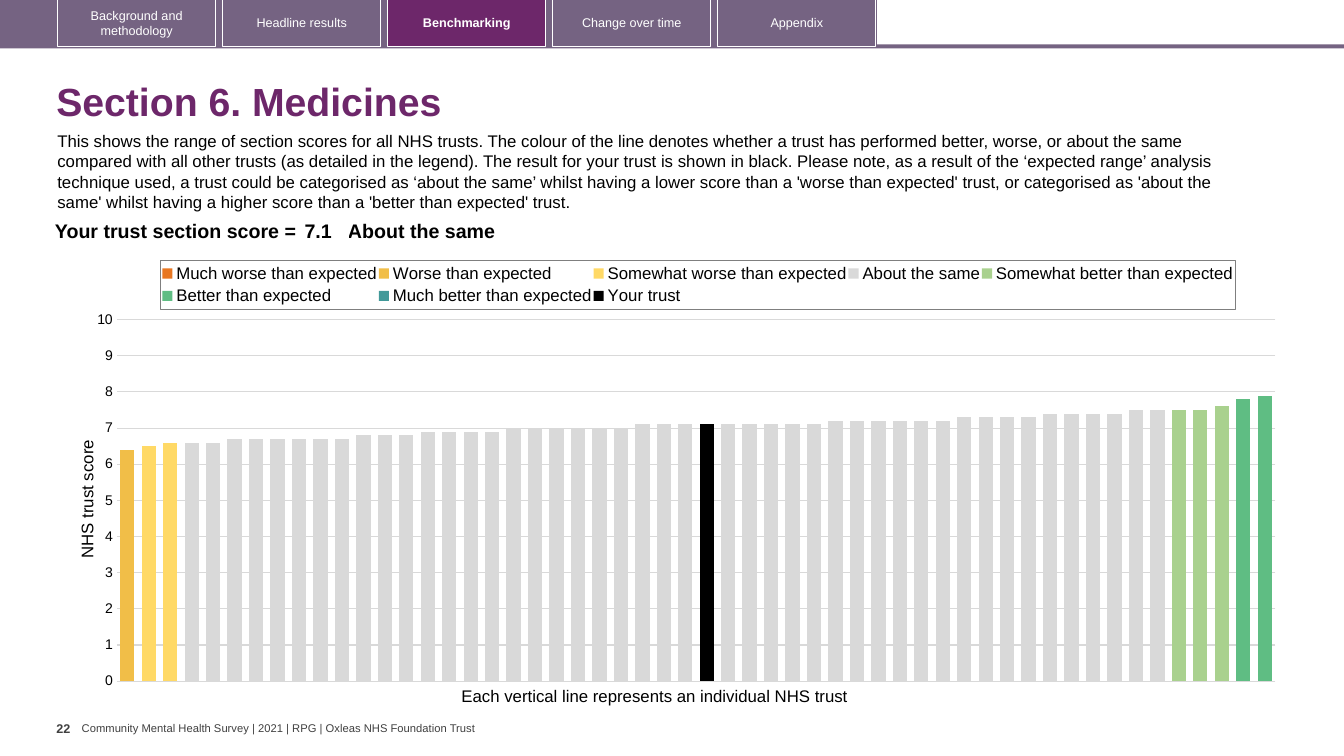
from copy import deepcopy
from dataclasses import dataclass

from lxml.etree import SubElement
from pptx import Presentation
from pptx.chart.data import CategoryChartData
from pptx.dml.color import RGBColor
from pptx.enum.chart import XL_CHART_TYPE, XL_LEGEND_POSITION, XL_TICK_MARK
from pptx.enum.shapes import MSO_SHAPE
from pptx.enum.text import MSO_ANCHOR, PP_ALIGN
from pptx.oxml import parse_xml
from pptx.oxml.ns import nsdecls, qn
from pptx.util import Inches, Pt


@dataclass(frozen=True)
class Theme:
    font: str = "Arial"
    plum: str = "6D276A"
    mauve: str = "756382"
    white: str = "FFFFFF"
    black: str = "000000"
    grey: str = "404040"
    grid: str = "D9D9D9"
    frame: str = "7F7F7F"
    title: int = 28
    score: int = 14
    body: int = 12
    ticks: int = 10
    small: int = 9
    footer: int = 8


T = Theme()
WIDTH, HEIGHT = Inches(13.33), Inches(7.5)

TABS = ["Background and methodology", "Headline results", "Benchmarking",
        "Change over time", "Appendix"]
ACTIVE_TAB = "Benchmarking"
INTRO = (
    "This shows the range of section scores for all NHS trusts. The colour of the line "
    "denotes whether a trust has performed better, worse, or about the same compared with "
    "all other trusts (as detailed in the legend). The result for your trust is shown in "
    "black. Please note, as a result of the ‘expected range’ analysis technique used, a "
    "trust could be categorised as ‘about the same’ whilst having a lower score than a "
    "'worse than expected' trust, or categorised as 'about the same' whilst having a higher "
    "score than a 'better than expected' trust.")

TRUSTS = 54
# Scores as (score, number of trusts) in ascending order
ABOUT_THE_SAME = [(6.6, 2), (6.7, 6), (6.8, 3), (6.9, 4), (7, 6), (7.1, 9),
                  (7.2, 6), (7.3, 4), (7.4, 4), (7.5, 2)]
# Series: name, colour, first trust, scores
BANDS = [
    ("Much worse than expected", "E87722", 1, []),
    ("Worse than expected", "F1BE48", 1, [(6.4, 1)]),
    ("Somewhat worse than expected", "FFD966", 2, [(6.5, 1), (6.6, 1)]),
    ("About the same", "D9D9D9", 4, ABOUT_THE_SAME),
    ("Somewhat better than expected", "A9D18E", 50, [(7.5, 2), (7.6, 1)]),
    ("Better than expected", "5FBD83", 53, [(7.8, 1), (7.9, 1)]),
    ("Much better than expected", "419999", 1, []),
    ("Your trust", T.black, 28, [(7.1, 1)]),
]


def col(n):
    """Hundredths of the slide width."""
    return round(WIDTH * n / 100)


def row(n):
    """Hundredths of the slide height."""
    return round(HEIGHT * n / 100)


def place(x, y, w, h):
    return col(x), row(y), col(w), row(h)


def style(font, size, color=T.black, bold=False):
    font.name, font.size, font.bold = T.font, Pt(size), bold
    font.color.rgb = RGBColor.from_string(color)


def add_text(slide, box, text, size, color=T.black, bold=False, wrap=True,
             anchor=MSO_ANCHOR.TOP, spacing=None, inset=None):
    tf = slide.shapes.add_textbox(*place(*box)).text_frame
    tf.word_wrap, tf.vertical_anchor = wrap, anchor
    if inset is not None:
        tf.margin_left = tf.margin_right = 0
        tf.margin_top = tf.margin_bottom = Inches(inset)
    p = tf.paragraphs[0]
    p.text, p.line_spacing = text, spacing
    style(p.font, size, color, bold)


def add_rect(slide, box, fill=None, line=None):
    sp = slide.shapes.add_shape(MSO_SHAPE.RECTANGLE, *place(*box))
    sp.shadow.inherit = False
    if fill:
        sp.fill.solid()
        sp.fill.fore_color.rgb = RGBColor.from_string(fill)
    else:
        sp.fill.background()
    if line:
        sp.line.color.rgb = RGBColor.from_string(line)
        sp.line.width = Pt(0.75)
    else:
        sp.line.fill.background()
    return sp


def add_tab(slide, index, label):
    active = label == ACTIVE_TAB
    sp = add_rect(slide, (4.28 + 12.28 * index, -0.13, 11.78, 6.27),
                  T.plum if active else None, T.white)
    tf = sp.text_frame
    tf.word_wrap, tf.vertical_anchor = True, MSO_ANCHOR.MIDDLE
    p = tf.paragraphs[0]
    p.text, p.alignment = label, PP_ALIGN.CENTER
    style(p.font, T.small, T.white, active)


def add_score_row(slide):
    cells = [("Your trust section score =", 19.73, 0.04, PP_ALIGN.RIGHT),
             ("7.1", 3.53, 0.04, PP_ALIGN.LEFT),
             ("About the same", 64.44, 0, PP_ALIGN.LEFT)]
    total = sum(width for _, width, _, _ in cells)
    table = slide.shapes.add_table(1, len(cells), *place(2.63, 28.67, total, 4.13)).table
    table.first_row = table.horz_banding = False
    for i, (text, width, side, align) in enumerate(cells):
        table.columns[i].width = col(width)
        cell = table.cell(0, i)
        cell.fill.background()
        cell.margin_left = cell.margin_right = Inches(side)
        cell.margin_top = cell.margin_bottom = Inches(0.04)
        p = cell.text_frame.paragraphs[0]
        p.text, p.alignment = text, align
        style(p.font, T.score, bold=True)


def scores(first, runs):
    values = [score for score, count in runs for _ in range(count)]
    before = [None] * (first - 1)
    return before + values + [None] * (TRUSTS - len(before) - len(values))


def layout(x, y, w=None, h=None, inner=False):
    """Manual layout in shares of the chart's size."""
    target = '<c:layoutTarget val="inner"/>' if inner else ""
    sizes = f'<c:w val="{w}"/><c:h val="{h}"/>' if w else ""
    return parse_xml(
        f'<c:layout {nsdecls("c")}><c:manualLayout>{target}<c:xMode val="edge"/>'
        f'<c:yMode val="edge"/><c:x val="{x}"/><c:y val="{y}"/>{sizes}'
        '</c:manualLayout></c:layout>')


def set_layout(parent, new, after=None):
    for old in parent.findall(qn("c:layout")):
        parent.remove(old)
    if after:
        parent.find(qn(after)).addnext(new)
    else:
        parent.insert(0, new)


def move_last_series_to_right_axis(plot_area):
    bars = plot_area.find(qn("c:barChart"))
    right_bars = deepcopy(bars)
    bars.remove(bars.findall(qn("c:ser"))[-1])
    for ser in right_bars.findall(qn("c:ser"))[:-1]:
        right_bars.remove(ser)
    bars.addnext(right_bars)

    cat_ax, val_ax = plot_area.find(qn("c:catAx")), plot_area.find(qn("c:valAx"))
    right_cat, right_val = deepcopy(cat_ax), deepcopy(val_ax)
    val_ax.addnext(right_cat)
    right_cat.addnext(right_val)
    ids = {cat_ax.find(qn("c:axId")).get("val"): "5001",
           val_ax.find(qn("c:axId")).get("val"): "5002"}
    for part in (right_bars, right_cat, right_val):
        for ref in part.findall(qn("c:axId")) + part.findall(qn("c:crossAx")):
            ref.set("val", ids[ref.get("val")])
    for tag in ("c:majorGridlines", "c:title"):
        right_val.remove(right_val.find(qn(tag)))
    for tag, value in (("c:axPos", "r"), ("c:majorTickMark", "out"),
                       ("c:tickLblPos", "none"), ("c:crosses", "max")):
        right_val.find(qn(tag)).set("val", value)


def add_score_chart(slide):
    data = CategoryChartData()
    data.categories = [str(n) for n in range(1, TRUSTS + 1)]
    for name, _, first, runs in BANDS:
        data.add_series(name, scores(first, runs))
    chart = slide.shapes.add_chart(XL_CHART_TYPE.COLUMN_CLUSTERED,
                                   *place(5.03, 32.93, 91.15, 59.2), data).chart
    style(chart.font, T.ticks)
    chart.has_title = False

    # Columns
    plot = chart.plots[0]
    plot.gap_width, plot.overlap, plot.vary_by_categories = 50, 100, False
    for series, (_, color, _, _) in zip(plot.series, BANDS):
        series.format.fill.solid()
        series.format.fill.fore_color.rgb = RGBColor.from_string(color)

    # Axes
    chart.category_axis.visible = False
    axis = chart.value_axis
    axis.minimum_scale, axis.maximum_scale, axis.major_unit = 0, 10, 1
    axis.major_tick_mark = axis.minor_tick_mark = XL_TICK_MARK.NONE
    axis.format.line.fill.background()
    axis.major_gridlines.format.line.color.rgb = RGBColor.from_string(T.grid)
    axis.major_gridlines.format.line.width = Pt(0.75)
    style(axis.tick_labels.font, T.ticks)
    title = axis.axis_title
    title.text_frame.text = "NHS trust score"
    style(title.text_frame.paragraphs[0].font, T.body)
    title.text_frame._txBody.bodyPr.set("rot", "-5400000")
    set_layout(title._element, layout(0.005, 0.42), "c:tx")

    # Legend
    chart.has_legend = True
    legend = chart.legend
    legend.position, legend.include_in_layout = XL_LEGEND_POSITION.TOP, False
    style(legend.font, T.body)
    set_layout(legend._element, layout(0.076, 0.025, 0.877, 0.11), "c:legendPos")
    frame = parse_xml(
        f'<c:spPr {nsdecls("c", "a")}><a:ln w="9525"><a:solidFill>'
        f'<a:srgbClr val="{T.frame}"/></a:solidFill></a:ln></c:spPr>')
    legend._element.find(qn("c:txPr")).addprevious(frame)

    # Plot area
    plot_area = chart.element.find(".//" + qn("c:plotArea"))
    set_layout(plot_area, layout(0.04, 0.158, 0.946, 0.808, inner=True))
    move_last_series_to_right_axis(plot_area)


def main():
    prs = Presentation()
    prs.slide_width, prs.slide_height = WIDTH, HEIGHT
    slide = prs.slides.add_slide(prs.slide_layouts[6])

    # Navigation
    add_rect(slide, (0, 5.87, 100, 0.53), T.mauve)
    add_rect(slide, (0, 0, 65.25, 6.27), T.mauve)
    for i, label in enumerate(TABS):
        add_tab(slide, i, label)

    # Heading and introduction
    add_text(slide, (3.45, 8.93, 93.7, 9.6), "Section 6. Medicines", T.title, T.plum,
             bold=True, anchor=MSO_ANCHOR.MIDDLE, spacing=0.9)
    add_text(slide, (3.53, 16.67, 91, 12.13), INTRO, T.body)

    # Results
    add_score_chart(slide)
    add_score_row(slide)
    add_text(slide, (33.6, 90, 30.83, 4),
             "Each vertical line represents an individual NHS trust", T.body, wrap=False)

    # Footer
    add_text(slide, (4.2, 94.67, 1.88, 5.33), "22", T.small, T.grey, bold=True,
             wrap=False, inset=0.05)
    add_text(slide, (6.08, 95.47, 29.7, 1.73),
             "Community Mental Health Survey | 2021 | RPG | Oxleas NHS Foundation Trust",
             T.footer, T.grey, wrap=False, anchor=MSO_ANCHOR.MIDDLE, inset=0)

    prs.save("out.pptx")


if __name__ == "__main__":
    main()
